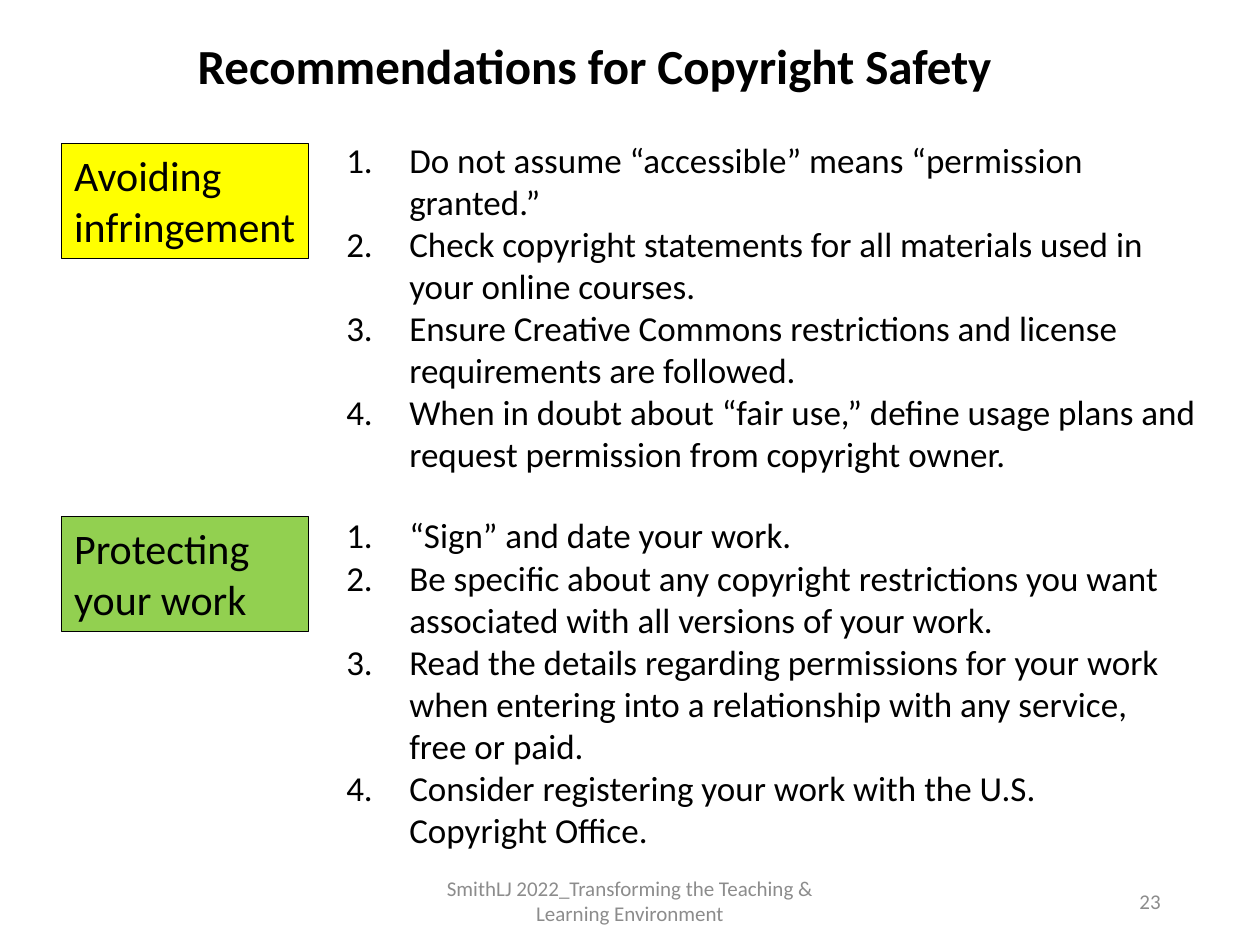
from pptx import Presentation
from pptx.dml.color import RGBColor
from pptx.enum.shapes import MSO_SHAPE
from pptx.enum.text import MSO_ANCHOR, MSO_AUTO_SIZE, PP_ALIGN
from pptx.util import Inches, Pt
from lxml.etree import SubElement
from pptx.oxml.ns import qn
from dataclasses import dataclass


@dataclass(frozen=True)
class Theme:
    font: str = "Calibri"
    ink: str = "000000"
    gray: str = "8C8C8C"
    yellow: str = "FFFF00"
    green: str = "92D050"
    title: int = 28
    label: int = 24
    body: int = 20
    foot: int = 12


THEME = Theme()
WIDE, HIGH = Inches(10), Inches(7.5)

# Columns and the footer row, in percent of the slide
LABEL_X, LABEL_W = 4.9, 19.6
LIST_X, LIST_H = 26.5, 37.2
FOOT_Y, FOOT_H = 92.67, 5.33

# Label lines, fill, label top, list top, list width, list items
PARTS = [
    (["Avoiding", "infringement"], THEME.yellow, 15.2, 14, 69.7, [
        "Do not assume “accessible” means “permission granted.”",
        "Check copyright statements for all materials used in your online courses.",
        "Ensure Creative Commons restrictions and license requirements are followed.",
        "When in doubt about “fair use,” define usage plans and request "
        "permission from copyright owner.",
    ]),
    (["Protecting your work"], THEME.green, 54.67, 53.73, 66.7, [
        "“Sign” and date your work.",
        "Be specific about any copyright restrictions you want associated with "
        "all versions of your work.",
        "Read the details regarding permissions for your work when entering into "
        "a relationship with any service, free or paid.",
        "Consider registering your work with the U.S. Copyright Office.",
    ]),
]


def apply(item, values):
    for name, value in values.items():
        setattr(item, name, value)


def place(x, y, w, h):
    """Turn percent of the slide into lengths."""
    return [int(n * side / 100) for n, side in zip((x, y, w, h), (WIDE, HIGH) * 2)]


def write(shape, lines, size, color=THEME.ink, align=PP_ALIGN.LEFT, bold=False, **frame):
    text = shape.text_frame
    apply(text, {"word_wrap": True, "vertical_anchor": MSO_ANCHOR.TOP, **frame})
    text.text = "\n".join(lines)
    for para in text.paragraphs:
        para.alignment = align
        font = para.runs[0].font
        apply(font, {"name": THEME.font, "size": Pt(size), "bold": bold})
        font.color.rgb = RGBColor.from_string(color)


def add_text(slide, box, lines, size, **style):
    shape = slide.shapes.add_textbox(*place(*box))
    write(shape, lines, size, **style)
    return shape


def add_label(slide, box, lines, fill):
    shape = slide.shapes.add_shape(MSO_SHAPE.RECTANGLE, *place(*box))
    shape.shadow.inherit = False
    shape.fill.solid()
    shape.fill.fore_color.rgb = RGBColor.from_string(fill)
    shape.line.color.rgb = RGBColor.from_string(THEME.ink)
    shape.line.width = Pt(0.75)
    write(shape, lines, THEME.label, auto_size=MSO_AUTO_SIZE.SHAPE_TO_FIT_TEXT)


def add_list(slide, box, items):
    shape = add_text(slide, box, items, THEME.body,
                     auto_size=MSO_AUTO_SIZE.SHAPE_TO_FIT_TEXT)
    indent = Inches(0.5)
    for para in shape.text_frame.paragraphs:
        props = para._p.get_or_add_pPr()
        props.set("marL", str(indent))
        props.set("indent", str(-indent))
        SubElement(props, qn("a:buFont"), typeface="+mj-lt")
        SubElement(props, qn("a:buAutoNum"), type="arabicPeriod")


def main():
    deck = Presentation()
    apply(deck, {"slide_width": WIDE, "slide_height": HIGH})
    slide = deck.slides.add_slide(deck.slide_layouts[6])

    # Footer and page number
    foot = {"size": THEME.foot, "color": THEME.gray, "vertical_anchor": MSO_ANCHOR.MIDDLE}
    add_text(slide, (33.1, FOOT_Y, 33.8, FOOT_H),
             ["SmithLJ 2022_Transforming the Teaching & Learning Environment"],
             align=PP_ALIGN.CENTER, **foot)
    add_text(slide, (70.6, FOOT_Y, 22.5, FOOT_H), ["23"], align=PP_ALIGN.RIGHT, **foot)

    # Title
    add_text(slide, (14.7, 3.07, 65.8, 7.6), ["Recommendations for Copyright Safety"],
             THEME.title, bold=True, word_wrap=False,
             auto_size=MSO_AUTO_SIZE.SHAPE_TO_FIT_TEXT)

    # Labels with their numbered lists
    for lines, fill, label_y, list_y, list_w, items in PARTS:
        add_label(slide, (LABEL_X, label_y, LABEL_W, 12.13), lines, fill)
        add_list(slide, (LIST_X, list_y, list_w, LIST_H), items)

    deck.save("out.pptx")


if __name__ == "__main__":
    main()
